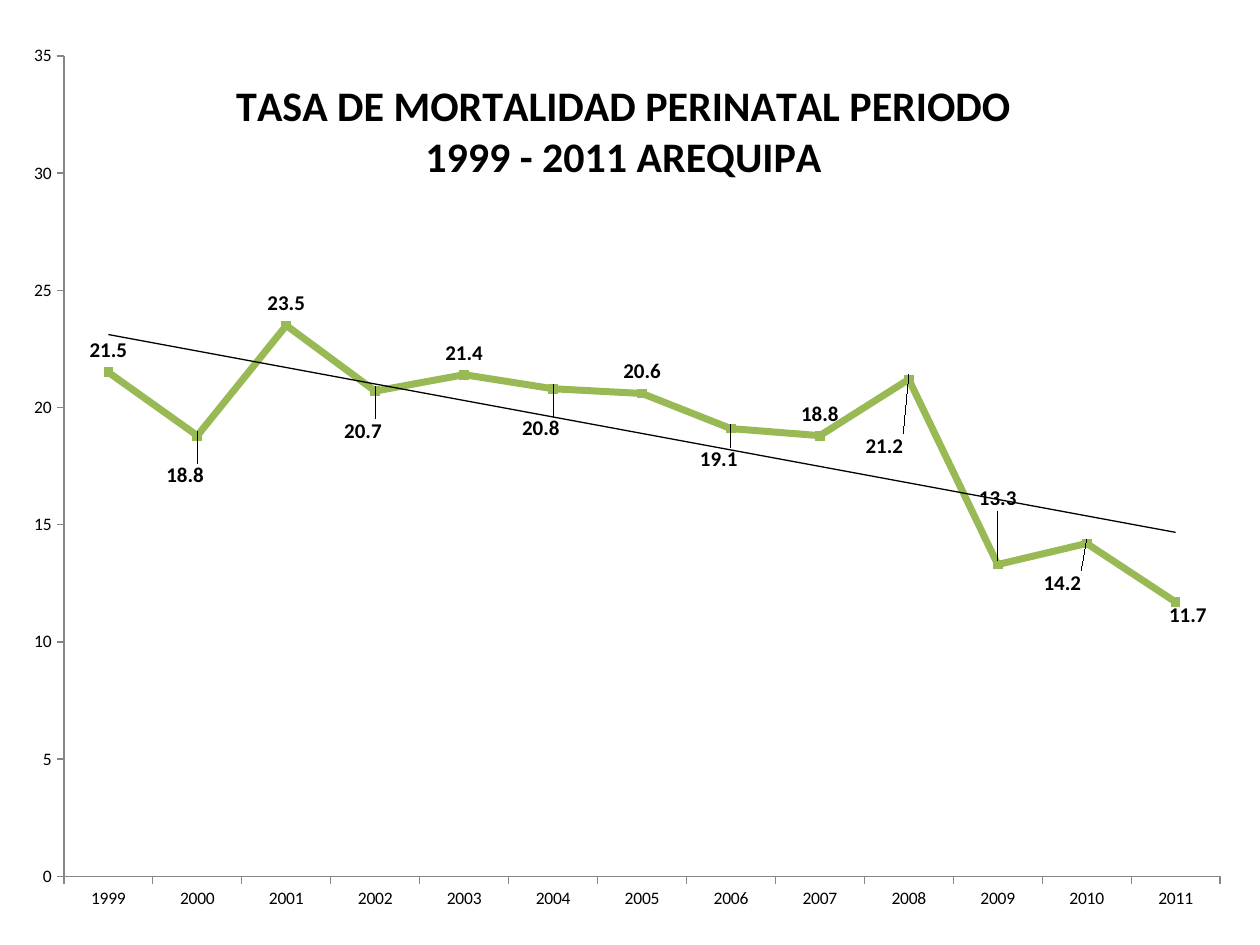
from dataclasses import dataclass

from lxml import etree
from pptx import Presentation
from pptx.chart.data import CategoryChartData
from pptx.dml.color import RGBColor
from pptx.enum.chart import (
    XL_CHART_TYPE as ChartType,
    XL_LABEL_POSITION as LabelPosition,
    XL_MARKER_STYLE as MarkerStyle,
    XL_TICK_MARK as TickMark,
)
from pptx.oxml import parse_xml
from pptx.oxml.ns import nsdecls, qn
from pptx.util import Pt


@dataclass(frozen=True)
class Theme:
    font: str = "Calibri"
    text: RGBColor = RGBColor(0, 0, 0)
    rate: RGBColor = RGBColor(0x98, 0xB9, 0x54)
    axis: RGBColor = RGBColor(0x86, 0x86, 0x86)
    title_size: int = 24
    label_size: int = 12
    axis_size: int = 10


YEARS = [str(year) for year in range(1999, 2012)]
RATES = [21.5, 18.8, 23.5, 20.7, 21.4, 20.8, 20.6, 19.1, 18.8, 21.2, 13.3, 14.2, 11.7]
TITLE = ["TASA DE MORTALIDAD PERINATAL PERIODO", "1999 - 2011 AREQUIPA"]

# Label shifts from the place above the point, as fractions of the chart
LABEL_SHIFTS = {
    "2000": (-0.01, 0.07),
    "2002": (-0.01, 0.07),
    "2004": (-0.01, 0.07),
    "2006": (-0.01, 0.06),
    "2008": (-0.02, 0.10),
    "2009": (0, -0.05),
    "2010": (-0.02, 0.07),
    "2011": (0.01, 0.04),
}


def manual_layout(**settings):
    layout = parse_xml(f"<c:layout {nsdecls('c')}><c:manualLayout/></c:layout>")
    for name, value in settings.items():
        etree.SubElement(layout[0], qn(f"c:{name}")).set("val", str(value))
    return layout


class SlideBuilder:
    def __init__(self, page, theme):
        self.page = page
        self.theme = theme

    def style_font(self, font, size, bold=False):
        font.name = self.theme.font
        font.size = Pt(size)
        font.bold = bold
        font.color.rgb = self.theme.text

    def line_chart(self, left, top, width, height):
        data = CategoryChartData()
        data.categories = YEARS
        data.add_series("Series 1", RATES)
        chart = self.page.shapes.add_chart(
            ChartType.LINE_MARKERS, Pt(left), Pt(top), Pt(width), Pt(height), data
        ).chart
        chart.has_legend = False
        self.style_font(chart.font, self.theme.axis_size)
        plot_area = chart.plots[0]._element.getparent()
        for old in plot_area.findall(qn("c:layout")):
            plot_area.remove(old)
        plot_area.insert(0, manual_layout(
            layoutTarget="inner", xMode="edge", yMode="edge",
            x=0.04, y=0.012, w=0.947, h=0.929))
        chart.plots[0].vary_by_categories = False
        return chart

    def title(self, chart, lines):
        frame = chart.chart_title.text_frame
        for index, line in enumerate(lines):
            para = frame.paragraphs[0] if index == 0 else frame.add_paragraph()
            para.text = line
            self.style_font(para.font, self.theme.title_size, True)
        element = chart.chart_title._element
        for name in ("c:layout", "c:overlay"):
            for old in element.findall(qn(name)):
                element.remove(old)
        element.find(qn("c:tx")).addnext(
            manual_layout(xMode="edge", yMode="edge", x=0.178, y=0.034))
        element.find(qn("c:layout")).addnext(
            parse_xml(f'<c:overlay {nsdecls("c")} val="1"/>'))

    def axes(self, chart):
        for axis in (chart.category_axis, chart.value_axis):
            axis.has_major_gridlines = False
            axis.major_tick_mark = TickMark.OUTSIDE
            axis.minor_tick_mark = TickMark.NONE
            axis.format.line.color.rgb = self.theme.axis
            axis.format.line.width = Pt(0.75)
            self.style_font(axis.tick_labels.font, self.theme.axis_size)
        chart.value_axis.minimum_scale = 0
        chart.value_axis.maximum_scale = 35
        chart.value_axis.major_unit = 5

    def rate_line(self, series):
        series.smooth = False
        series.format.line.color.rgb = self.theme.rate
        series.format.line.width = Pt(4)
        marker = series.marker
        marker.style = MarkerStyle.SQUARE
        marker.size = 5
        marker.format.fill.solid()
        marker.format.fill.fore_color.rgb = self.theme.rate
        marker.format.line.color.rgb = self.theme.rate

    def labels(self, series):
        labels = series.data_labels
        labels.show_value = True
        labels.position = LabelPosition.ABOVE
        self.style_font(labels.font, self.theme.label_size, True)
        for year, (x, y) in LABEL_SHIFTS.items():
            index = YEARS.index(year)
            label = series.points[index].data_label
            self.style_font(label.font, self.theme.label_size, True)
            label.position = LabelPosition.ABOVE
            element = labels._element.xpath(f"c:dLbl[c:idx/@val={index}]")[0]
            element.find(qn("c:idx")).addnext(manual_layout(x=x, y=y))

    def trend_line(self, series):
        series._element.find(qn("c:cat")).addprevious(parse_xml(
            f'<c:trendline {nsdecls("c", "a")}><c:spPr><a:ln w="{Pt(0.75)}">'
            f'<a:solidFill><a:srgbClr val="{self.theme.text}"/></a:solidFill>'
            '</a:ln></c:spPr><c:trendlineType val="linear"/>'
            '<c:dispRSqr val="0"/><c:dispEq val="0"/></c:trendline>'))


def main():
    deck = Presentation()
    deck.slide_width, deck.slide_height = Pt(720), Pt(540)
    page = deck.slides.add_slide(deck.slide_layouts[6])
    builder = SlideBuilder(page, Theme())

    # Chart frame, title and axes
    chart = builder.line_chart(8.64, 25.92, 697.68, 504.72)
    builder.title(chart, TITLE)
    builder.axes(chart)

    # Mortality rate with its labels and trend
    series = chart.plots[0].series[0]
    builder.rate_line(series)
    builder.labels(series)
    builder.trend_line(series)

    deck.save("out.pptx")


if __name__ == "__main__":
    main()
